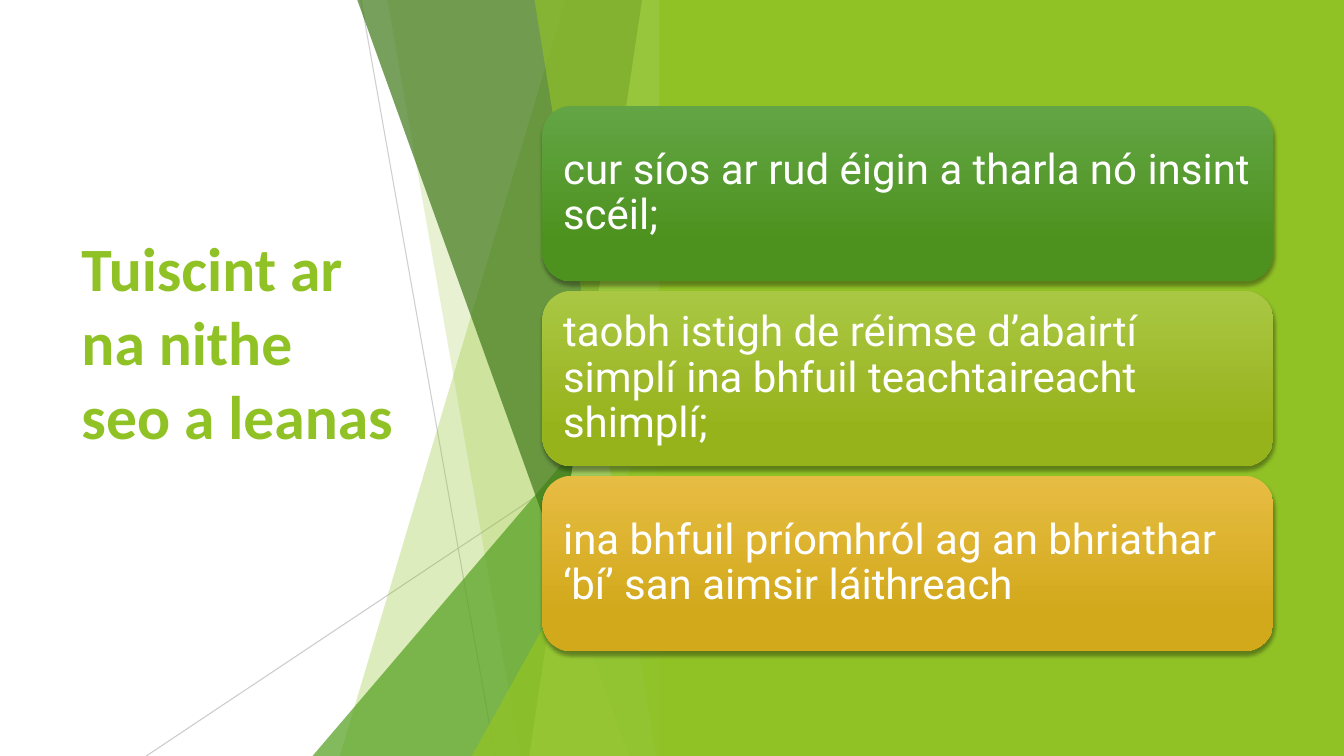
from dataclasses import dataclass

from lxml.etree import SubElement
from pptx import Presentation
from pptx.dml.color import RGBColor
from pptx.enum.shapes import MSO_CONNECTOR as CONNECTOR, MSO_SHAPE as SHAPE
from pptx.enum.text import MSO_ANCHOR as ANCHOR, PP_ALIGN as ALIGN
from pptx.oxml.ns import qn
from pptx.util import Inches, Pt


@dataclass(frozen=True)
class Theme:
    lime: str = "90C226"
    green: str = "54A021"
    forest: str = "3F7819"
    pale: str = "C0E474"
    hairline: str = "BFBFBF"
    white: str = "FFFFFF"
    title_font: str = "Calibri"
    card_font: str = "Roboto"
    title_size: int = 44
    card_size: int = 30


THEME = Theme()
SLIDE_W, SLIDE_H = 13.33, 7.5
FACET_TOP, FACET_RIGHT = -0.01, 6.66

# Facets, back to front: top-left x, bottom-left x, colour, opacity
BACK_FACETS = [
    (5.61, 3.37, THEME.lime, 30),
    (3.84, 5.16, THEME.lime, 20),
]
FRONT_FACETS = [
    (3.54, 6.24, THEME.forest, 70),
    (6.37, 5.25, THEME.pale, 70),
    (5.3, 6.51, THEME.lime, 65),
]

# Cards: text, gradient top colour, gradient bottom colour
CARDS = [
    ("cur síos ar rud éigin a tharla nó insint scéil;", "63A545", "4D921E"),
    ("taobh istigh de réimse d’abairtí simplí ina bhfuil teachtaireacht shimplí;",
     "AAC744", "97B31C"),
    ("ina bhfuil príomhról ag an bhriathar ‘bí’ san aimsir láithreach",
     "E7BC43", "D2A91B"),
]
CARD_LEFT, CARD_TOP, CARD_W, CARD_H, CARD_PITCH = 5.38, 1.05, 7.25, 1.74, 1.835


def rgb(colour):
    return RGBColor.from_string(colour)


def set_opacity(shape, percent):
    colour = shape._element.spPr.find(".//" + qn("a:srgbClr"))
    SubElement(colour, qn("a:alpha"), val=str(percent * 1000))


def paint(shape, colour, opacity=100):
    shape.shadow.inherit = False
    shape.line.fill.background()
    shape.fill.solid()
    shape.fill.fore_color.rgb = rgb(colour)
    if opacity < 100:
        set_opacity(shape, opacity)


def add_hairline(shapes, start, end, opacity):
    ends = [Inches(value) for value in (*start, *end)]
    hairline = shapes.add_connector(CONNECTOR.STRAIGHT, *ends)
    hairline.line.color.rgb = rgb(THEME.hairline)
    hairline.line.width = Pt(0.75)
    set_opacity(hairline, opacity)
    SubElement(hairline._element.spPr, qn("a:effectLst"))


def add_facet(shapes, top_x, bottom_x, colour, opacity):
    corners = [(top_x, FACET_TOP), (FACET_RIGHT, FACET_TOP),
               (FACET_RIGHT, SLIDE_H), (bottom_x, SLIDE_H)]
    points = [(Inches(x), Inches(y)) for x, y in corners]
    outline = shapes.build_freeform(*points[0])
    outline.add_line_segments(points[1:], close=True)
    paint(outline.convert_to_shape(), colour, opacity)


def add_wedge(shapes, left, top, colour, opacity):
    wedge = shapes.add_shape(SHAPE.ISOSCELES_TRIANGLE, Inches(left), Inches(top),
                             Inches(FACET_RIGHT - left), Inches(SLIDE_H - top))
    wedge.adjustments[0] = 1
    paint(wedge, colour, opacity)


def format_text(frame, font_name, size, colour, bold=False):
    frame.word_wrap = True
    frame.vertical_anchor = ANCHOR.MIDDLE
    for paragraph in frame.paragraphs:
        paragraph.alignment = ALIGN.LEFT
        for run in paragraph.runs:
            run.font.name = font_name
            run.font.size = Pt(size)
            run.font.bold = bold
            run.font.color.rgb = rgb(colour)


def add_title(shapes, text):
    title = shapes.add_textbox(Inches(0.71), Inches(1.51), Inches(3.88), Inches(4.48))
    frame = title.text_frame
    frame.text = text
    frame.margin_bottom = Inches(0.78)
    format_text(frame, THEME.title_font, THEME.title_size, THEME.lime, bold=True)


def add_soft_shadow(shape):
    shape.shadow.inherit = False
    effects = shape._element.spPr.find(qn("a:effectLst"))
    shadow = SubElement(effects, qn("a:outerShdw"), blurRad=str(Pt(3)),
                        dist=str(Pt(2)), dir="5400000", rotWithShape="0")
    colour = SubElement(shadow, qn("a:srgbClr"), val="000000")
    SubElement(colour, qn("a:alpha"), val="35000")


def add_card(shapes, top, text, top_colour, bottom_colour):
    card = shapes.add_shape(SHAPE.ROUNDED_RECTANGLE, Inches(CARD_LEFT), Inches(top),
                            Inches(CARD_W), Inches(CARD_H))
    card.line.fill.background()
    card.fill.gradient()
    card.fill.gradient_angle = 270
    stops = zip(card.fill.gradient_stops, (0, 0.78), (top_colour, bottom_colour))
    for stop, position, colour in stops:
        stop.position = position
        stop.color.rgb = rgb(colour)
    add_soft_shadow(card)

    frame = card.text_frame
    frame.text = text
    frame.margin_left = frame.margin_right = Inches(0.12)
    frame.margin_top = frame.margin_bottom = Inches(0.12)
    frame.paragraphs[0].line_spacing = 0.9
    format_text(frame, THEME.card_font, THEME.card_size, THEME.white)


def add_facet_band(shapes):
    add_hairline(shapes, (3.58, 0), (4.91, SLIDE_H), 75)
    add_hairline(shapes, (FACET_RIGHT, 4.03), (1.45, SLIDE_H), 80)
    for facet in BACK_FACETS:
        add_facet(shapes, *facet)
    add_wedge(shapes, 3.1, 3.33, THEME.green, 72)
    for facet in FRONT_FACETS:
        add_facet(shapes, *facet)
    add_wedge(shapes, 4.68, 3.93, THEME.lime, 80)


def main():
    deck = Presentation()
    deck.slide_width, deck.slide_height = Inches(SLIDE_W), Inches(SLIDE_H)
    shapes = deck.slides.add_slide(deck.slide_layouts[6]).shapes

    # Title on the white side
    add_title(shapes, "Tuiscint ar\vna nithe\vseo a leanas")

    # Faceted band and green panel
    add_facet_band(shapes.add_group_shape().shapes)
    panel_left = 6.54
    panel = shapes.add_shape(SHAPE.RECTANGLE, Inches(panel_left), 0,
                             Inches(SLIDE_W - panel_left), Inches(SLIDE_H))
    paint(panel, THEME.lime)

    # Stacked cards
    for row, card in enumerate(CARDS):
        add_card(shapes, CARD_TOP + row * CARD_PITCH, *card)

    deck.save("out.pptx")


main()
